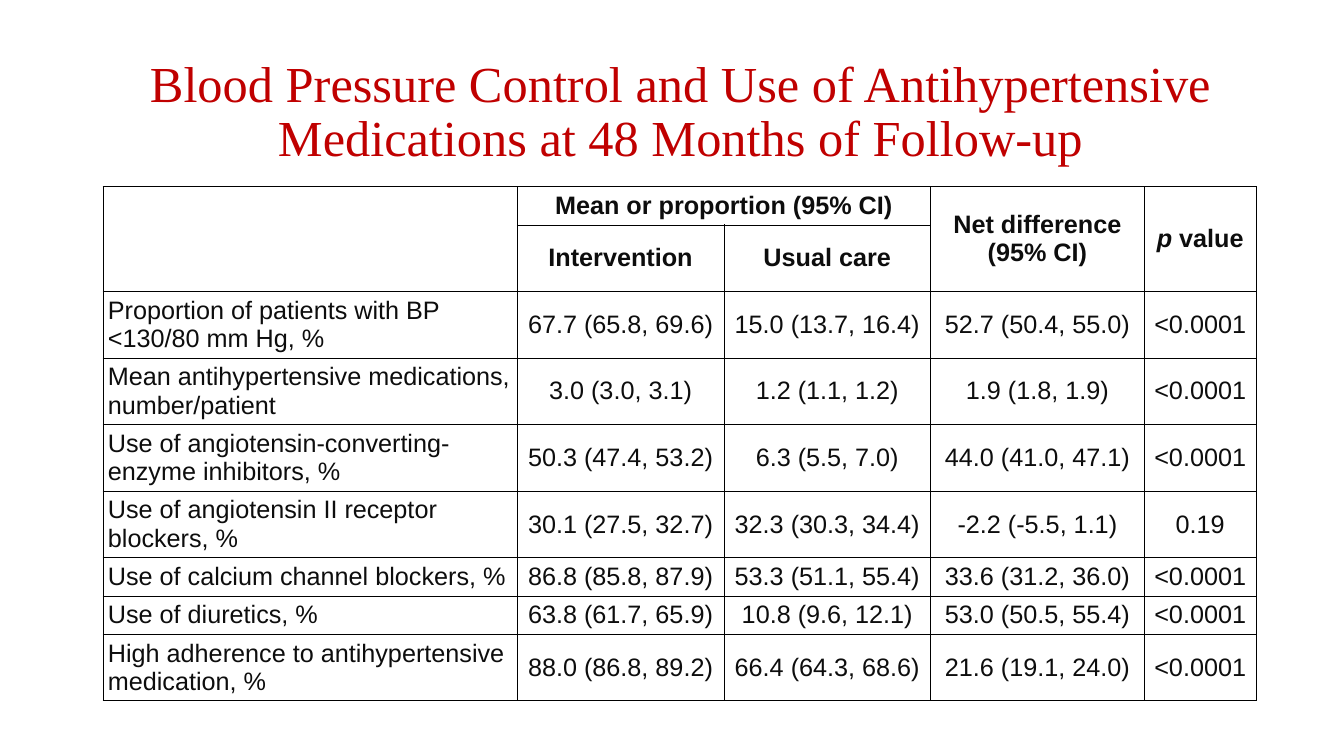
from lxml import etree
from pptx import Presentation
from pptx import util as u
from pptx.dml.color import RGBColor
from pptx.enum import text
from pptx.oxml import ns

COLORS = {"title": "C00000", "body": "0D0D0D", "border": "000000"}
TITLE = "Blood Pressure Control and Use of Antihypertensive Medications at 48 Months of Follow-up"
COLUMN_WIDTHS = [4.11, 2.05, 2.05, 2.12, 1.11]
ONE_LINE, TWO_LINES = 0.37, 0.66
ROW_HEIGHTS = [ONE_LINE, 0.65] + [TWO_LINES] * 4 + [ONE_LINE] * 2 + [TWO_LINES]
HEADER_ROWS = 2
ROWS = [
    ["", "Mean or proportion (95% CI)", "", "Net difference\n(95% CI)", "p value"],
    ["", "Intervention", "Usual care", "", ""],
    ["Proportion of patients with BP <130/80 mm Hg, %",
     "67.7 (65.8, 69.6)", "15.0 (13.7, 16.4)", "52.7 (50.4, 55.0)", "<0.0001"],
    ["Mean antihypertensive medications, number/patient",
     "3.0 (3.0, 3.1)", "1.2 (1.1, 1.2)", "1.9 (1.8, 1.9)", "<0.0001"],
    ["Use of angiotensin-converting-enzyme inhibitors, %",
     "50.3 (47.4, 53.2)", "6.3 (5.5, 7.0)", "44.0 (41.0, 47.1)", "<0.0001"],
    ["Use of angiotensin II receptor blockers, %",
     "30.1 (27.5, 32.7)", "32.3 (30.3, 34.4)", "-2.2 (-5.5, 1.1)", "0.19"],
    ["Use of calcium channel blockers, %",
     "86.8 (85.8, 87.9)", "53.3 (51.1, 55.4)", "33.6 (31.2, 36.0)", "<0.0001"],
    ["Use of diuretics, %",
     "63.8 (61.7, 65.9)", "10.8 (9.6, 12.1)", "53.0 (50.5, 55.4)", "<0.0001"],
    ["High adherence to antihypertensive medication, %",
     "88.0 (86.8, 89.2)", "66.4 (64.3, 68.6)", "21.6 (19.1, 24.0)", "<0.0001"],
]
MERGES = [((0, 0), (1, 0)), ((0, 1), (0, 2)), ((0, 3), (1, 3)), ((0, 4), (1, 4))]


class SlideBuilder:
    """Holds the text style and the current slide."""

    def __init__(self, presentation):
        self.slide = presentation.slides.add_slide(presentation.slide_layouts[5])
        self.title_font, self.body_font = "Times New Roman", "Arial"
        self.title_size, self.body_size = u.Pt(36), u.Pt(18)
        self.cell_margin = u.Inches(0.05)

    def format_font(self, font, name, size, color, bold=False):
        font.name, font.size, font.bold = name, size, bold
        font.color.rgb = RGBColor.from_string(COLORS[color])

    def title(self, words, left, top, width, height):
        shape = self.slide.shapes.title
        shape.left, shape.top = u.Inches(left), u.Inches(top)
        shape.width, shape.height = u.Inches(width), u.Inches(height)
        frame = shape.text_frame
        frame.text = words
        frame.word_wrap = True
        frame.auto_size = text.MSO_AUTO_SIZE.NONE
        frame.vertical_anchor = text.MSO_ANCHOR.MIDDLE
        paragraph = frame.paragraphs[0]
        paragraph.alignment = text.PP_ALIGN.CENTER
        paragraph.line_spacing = 0.9
        self.format_font(paragraph.font, self.title_font, self.title_size, "title")

    def border(self, cell):
        properties = cell._tc.get_or_add_tcPr()
        for side in ("a:lnL", "a:lnR", "a:lnT", "a:lnB"):
            line = etree.SubElement(properties, ns.qn(side), w=str(u.Pt(0.5)))
            fill = etree.SubElement(line, ns.qn("a:solidFill"))
            etree.SubElement(fill, ns.qn("a:srgbClr"), val=COLORS["border"])

    def cell(self, cell, words, centered, bold):
        self.border(cell)
        cell.fill.background()
        cell.vertical_anchor = text.MSO_ANCHOR.MIDDLE
        cell.margin_left = cell.margin_right = self.cell_margin
        cell.margin_top = cell.margin_bottom = self.cell_margin
        cell.text_frame.text = words
        for paragraph in cell.text_frame.paragraphs:
            paragraph.alignment = text.PP_ALIGN.CENTER if centered else text.PP_ALIGN.LEFT
            self.format_font(paragraph.font, self.body_font, self.body_size, "body", bold)

    def italicize_start(self, cell, start):
        paragraph = cell.text_frame.paragraphs[0]
        run = paragraph.runs[0]
        rest = run.text[len(start):]
        run.text = start
        run.font.italic = True
        paragraph.add_run().text = rest

    def table(self, rows, left, top):
        table = self.slide.shapes.add_table(
            len(rows), len(COLUMN_WIDTHS), u.Inches(left), u.Inches(top),
            u.Inches(sum(COLUMN_WIDTHS)), u.Inches(sum(ROW_HEIGHTS))).table
        table.first_row = table.horz_banding = False
        for column, width in zip(table.columns, COLUMN_WIDTHS):
            column.width = u.Inches(width)
        for row, height in zip(table.rows, ROW_HEIGHTS):
            row.height = u.Inches(height)
        for row_index, row in enumerate(rows):
            for column_index, words in enumerate(row):
                self.cell(table.cell(row_index, column_index), words,
                          centered=column_index > 0, bold=row_index < HEADER_ROWS)
        for first, last in MERGES:
            table.cell(*first).merge(table.cell(*last))
        return table


def main():
    presentation = Presentation()
    presentation.slide_width, presentation.slide_height = u.Inches(13.33), u.Inches(7.5)
    builder = SlideBuilder(presentation)
    builder.title(TITLE, 0.92, 0.4, 11.66, 1.45)
    table = builder.table(ROWS, 1.02, 1.85)
    builder.italicize_start(table.cell(0, 4), "p")
    presentation.save("out.pptx")


if __name__ == "__main__":
    main()
